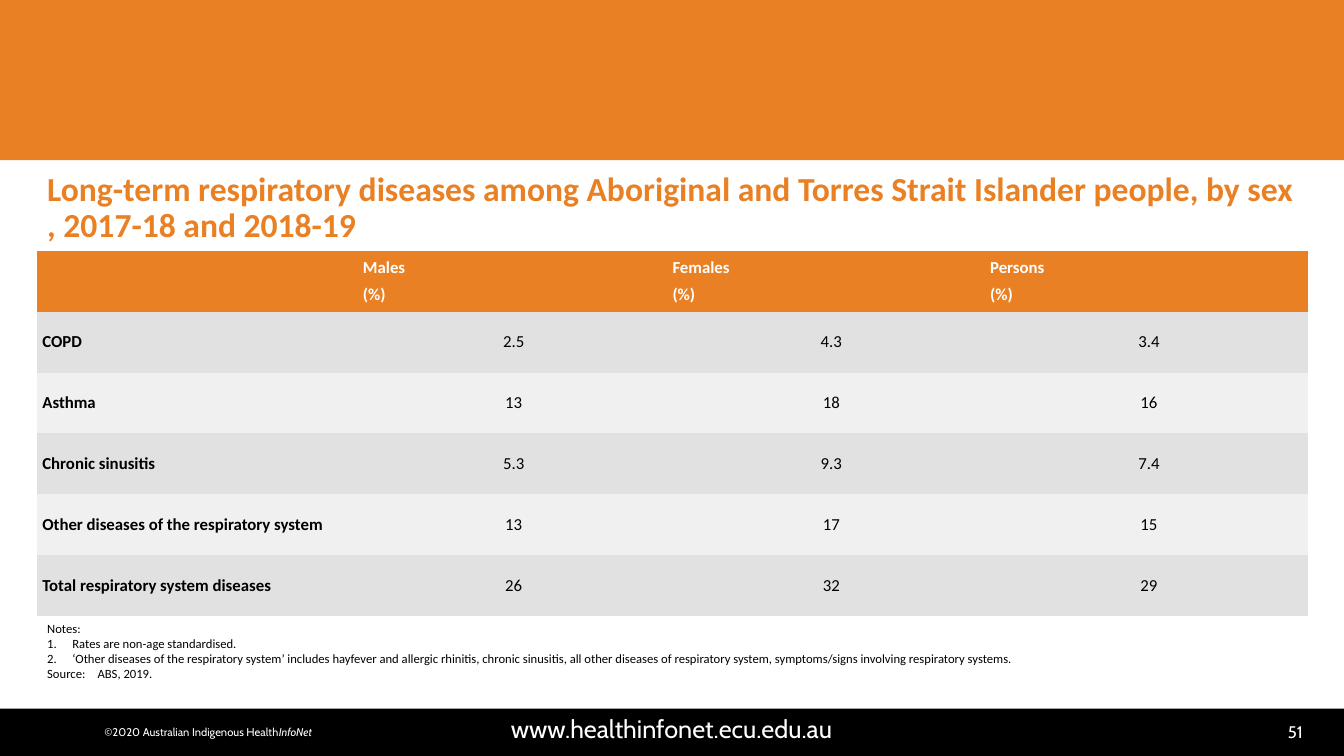
from lxml import etree
from pptx import Presentation
from pptx.dml.color import RGBColor
from pptx.enum.shapes import MSO_SHAPE
from pptx.enum.text import MSO_ANCHOR, PP_ALIGN
from pptx.oxml.ns import qn
from pptx.util import Inches, Pt

RECTANGLE = MSO_SHAPE.RECTANGLE
LEFT, CENTER, RIGHT = PP_ALIGN.LEFT, PP_ALIGN.CENTER, PP_ALIGN.RIGHT
TOP, MIDDLE = MSO_ANCHOR.TOP, MSO_ANCHOR.MIDDLE

COLORS = {"orange": "EA8024", "black": "000000", "white": "FFFFFF",
          "dark_row": "E1E1E1", "light_row": "F0F0F0"}
PLAIN_TABLE_STYLE = "{2D5ABB26-0587-4C30-8999-92F81FD0307C}"

TITLE = {"name": "Calibri", "size": Pt(24), "bold": True, "color": "orange"}
HEADER = {"name": "Calibri", "size": Pt(12), "bold": True, "color": "white"}
DISEASE = {**HEADER, "color": "black"}
RATE = {**DISEASE, "bold": False}
NOTE = {"name": "Calibri", "size": Pt(9), "color": "black"}
ADDRESS = {"name": "Cabin", "size": Pt(18), "color": "white"}
PAGE = {**ADDRESS, "size": Pt(12)}
COPYRIGHT = {**ADDRESS, "size": Pt(8)}

SEXES = ["Males", "Females", "Persons"]
RATES = [
    ("COPD", "2.5", "4.3", "3.4"),
    ("Asthma", "13", "18", "16"),
    ("Chronic sinusitis", "5.3", "9.3", "7.4"),
    ("Other diseases of the respiratory system", "13", "17", "15"),
    ("Total respiratory system diseases", "26", "32", "29"),
]
NOTES = [
    ("Notes:", False),
    ("Rates are non-age standardised.", True),
    ("‘Other diseases of the respiratory system’ includes hayfever and allergic "
     "rhinitis, chronic sinusitis, all other diseases of respiratory system, "
     "symptoms/signs involving respiratory systems.", True),
    ("Source: \tABS, 2019.", False),
]


def rgb(color):
    """Return the named colour."""
    return RGBColor.from_string(COLORS[color])


def add_run(paragraph, text, style):
    """Append a run with the given font values."""
    run = paragraph.add_run()
    run.text = text
    for key, value in style.items():
        if key == "color":
            run.font.color.rgb = rgb(value)
        else:
            setattr(run.font, key, value)


def add_band(slide, box, color):
    """Draw a plain filled band."""
    band = slide.shapes.add_shape(RECTANGLE, *map(Inches, box))
    band.shadow.inherit = False
    band.fill.solid()
    band.fill.fore_color.rgb = rgb(color)
    band.line.fill.background()


def add_text(slide, box, runs, align=LEFT, anchor=MIDDLE, wrap=True):
    """Add a text box with one paragraph of styled runs and return its frame."""
    frame = slide.shapes.add_textbox(*map(Inches, box)).text_frame
    frame.word_wrap = wrap
    frame.vertical_anchor = anchor
    frame.paragraphs[0].alignment = align
    for text, style in runs:
        add_run(frame.paragraphs[0], text, style)
    return frame


def add_footer(slide, box):
    """Draw the footer band with copyright, web address and page number."""
    left, top, width, height = box
    add_band(slide, box, "black")
    add_text(slide, (left + 11.95, top + 0.08, 1.07, 0.3), [("51", PAGE)], RIGHT)
    add_text(slide, (left + 0.62, top, 12.08, 0.39),
             [("www.healthinfonet.ecu.edu.au", ADDRESS)], CENTER)
    add_text(slide, (left + 0.92, top + 0.11, 2.29, 0.24),
             [("©2020 Australian Indigenous Health", COPYRIGHT),
              ("InfoNet", {**COPYRIGHT, "italic": True})], CENTER, wrap=False)


def add_title(slide, box):
    """Write the slide title."""
    frame = add_text(slide, box, [
        ("Long-term respiratory diseases among Aboriginal and Torres Strait "
         "Islander people, by sex , 2017-18 and 2018-19", TITLE)])
    frame.paragraphs[0].line_spacing = 0.9


def fill_cell(cell, lines, style, fill, align, insets):
    """Format a table cell and write its lines."""
    cell.fill.solid()
    cell.fill.fore_color.rgb = rgb(fill)
    cell.vertical_anchor = MIDDLE
    cell.margin_left = cell.margin_right = Inches(insets[0])
    cell.margin_top = cell.margin_bottom = Inches(insets[1])
    for index, line in enumerate(lines):
        frame = cell.text_frame
        paragraph = frame.add_paragraph() if index else frame.paragraphs[0]
        paragraph.alignment = align
        paragraph.space_after = Pt(5)
        add_run(paragraph, line, style)


def add_rates_table(slide, box):
    """Build the table of disease rates by sex."""
    row_count, column_count = len(RATES) + 1, len(SEXES) + 1
    table = slide.shapes.add_table(row_count, column_count, *map(Inches, box)).table
    table._tbl.tblPr.find(qn("a:tableStyleId")).text = PLAIN_TABLE_STYLE
    header_insets = [(0.08, 0.03), (0.08, 0.03), (0, 0), (0, 0)]
    body_insets = [(0.05, 0.05), (0.05, 0.05), (0, 0), (0, 0)]
    for column, sex in enumerate([None] + SEXES):
        lines = [sex, "(%)"] if sex else []
        fill_cell(table.cell(0, column), lines, HEADER, "orange", LEFT,
                  header_insets[column])
    for row, values in enumerate(RATES, 1):
        fill = "dark_row" if row % 2 else "light_row"
        for column, value in enumerate(values):
            style, align = (RATE, CENTER) if column else (DISEASE, LEFT)
            fill_cell(table.cell(row, column), [value], style, fill, align,
                      body_insets[column])


def add_notes(slide, box):
    """Write the numbered notes and the source."""
    frame = add_text(slide, box, [], anchor=TOP)
    for index, (text, numbered) in enumerate(NOTES):
        paragraph = frame.add_paragraph() if index else frame.paragraphs[0]
        properties = paragraph._p.get_or_add_pPr()
        if numbered:
            properties.set("marL", str(Inches(0.25)))
            properties.set("indent", str(Inches(-0.25)))
            etree.SubElement(properties, qn("a:buAutoNum"), type="arabicPeriod")
        tabs = etree.SubElement(properties, qn("a:tabLst"))
        for position in (0.5, 0.65):
            etree.SubElement(tabs, qn("a:tab"), pos=str(Inches(position)), algn="l")
        add_run(paragraph, text, NOTE)


def main():
    """Build and save the slide."""
    deck = Presentation()
    deck.slide_width, deck.slide_height = Inches(13.33), Inches(7.5)
    slide = deck.slides.add_slide(deck.slide_layouts[6])
    left, width = 0.37, 12.6
    add_band(slide, (0, 0, 13.33, 1.59), "orange")
    add_footer(slide, (0, 7.03, 13.33, 0.47))
    add_title(slide, (left, 1.65, width, 0.84))
    add_rates_table(slide, (left, 2.49, width, 3.62))
    add_notes(slide, (left, 6.11, width, 0.79))
    deck.save("out.pptx")


if __name__ == "__main__":
    main()
